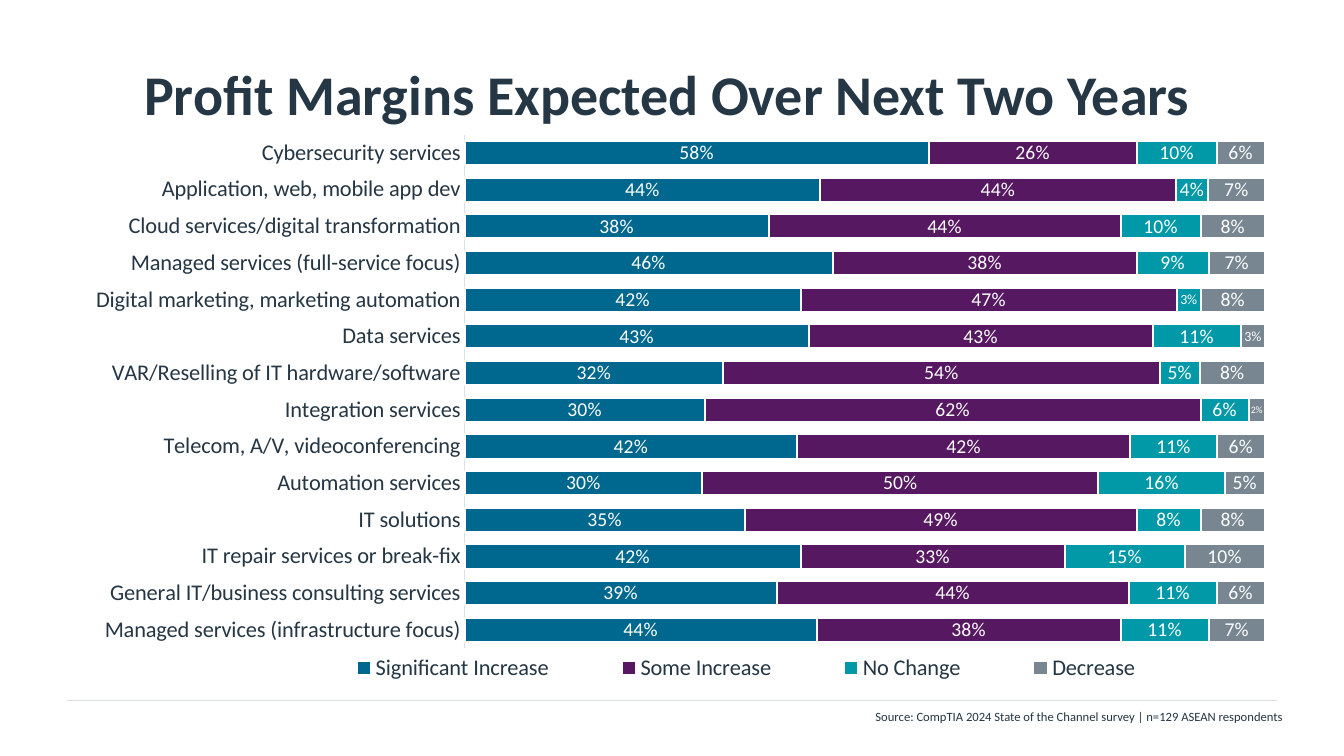
import pptx
import pptx.util
import pptx.oxml
import pptx.chart.data
import pptx.dml.color
import pptx.enum.chart
import pptx.enum.shapes
import pptx.enum.text
import lxml.etree

Pt = pptx.util.Pt
XL = pptx.enum.chart
ALIGN = pptx.enum.text.PP_ALIGN
INK, WHITE = "253644", "FEFFFE"
NS = "http://schemas.openxmlformats.org/drawingml/2006/chart"


def style(font, size, color, bold=False):
    look = {"name": "Calibri", "size": Pt(size), "bold": bold}
    for key, val in look.items():
        setattr(font, key, val)
    paint(font.color, color)


def paint(target, color):
    """Set the colour of a font, line or solid fill from a hex string."""
    target.rgb = pptx.dml.color.RGBColor.from_string(color)


deck = pptx.Presentation()
deck.slide_width, deck.slide_height = Pt(960), Pt(540)
slide = deck.slides.add_slide(deck.slide_layouts[5])
back = slide.background.fill
back.solid()
paint(back.fore_color, WHITE)

# Title
title = slide.shapes.title
place = {"left": Pt(48), "top": Pt(21.6), "width": Pt(864), "height": Pt(90)}
for key, val in place.items():
    setattr(title, key, val)
frame = title.text_frame
frame.text = "Profit Margins Expected Over Next Two Years"
inset = {"margin_left": 0, "margin_right": Pt(7.2),
         "margin_top": Pt(3.6), "margin_bottom": Pt(3.6),
         "vertical_anchor": pptx.enum.text.MSO_ANCHOR.MIDDLE,
         "auto_size": pptx.enum.text.MSO_AUTO_SIZE.NONE}
for key, val in inset.items():
    setattr(frame, key, val)
frame.paragraphs[0].alignment = ALIGN.CENTER
style(frame.paragraphs[0].runs[0].font, 40, INK, True)

# Footer rule
rule = slide.shapes.add_connector(
    pptx.enum.shapes.MSO_CONNECTOR.STRAIGHT, Pt(48), Pt(500.4), Pt(912), Pt(500.4))
rule.line.width = Pt(0.5)
paint(rule.line.color, "DADFE1")
lxml.etree.SubElement(rule._element.spPr, pptx.oxml.ns.qn("a:effectLst"))

# Chart data, from the bottom bar up; each row holds percentages by answer
answers = {"Significant Increase": "00688E", "Some Increase": "561861",
           "No Change": "0198A7", "Decrease": "778691"}
rows = [
    ("Managed services (infrastructure focus)", 44, 38, 11, 7),
    ("General IT/business consulting services", 39, 44, 11, 6),
    ("IT repair services or break-fix", 42, 33, 15, 10),
    ("IT solutions", 35, 49, 8, 8),
    ("Automation services", 30, 50, 16, 5),
    ("Telecom, A/V, videoconferencing", 42, 42, 11, 6),
    ("Integration services", 30, 62, 6, 2),
    ("VAR/Reselling of IT hardware/software", 32, 54, 5, 8),
    ("Data services", 43, 43, 11, 3),
    ("Digital marketing, marketing automation", 42, 47, 3, 8),
    ("Managed services (full-service focus)", 46, 38, 9, 7),
    ("Cloud services/digital transformation", 38, 44, 10, 8),
    ("Application, web, mobile app dev", 44, 44, 4, 7),
    ("Cybersecurity services", 58, 26, 10, 6),
]
data = pptx.chart.data.CategoryChartData(number_format="0%")
data.categories = [row[0] for row in rows]
for col, name in enumerate(answers, 1):
    data.add_series(name, [row[col] / 100 for row in rows])

chart = slide.shapes.add_chart(
    XL.XL_CHART_TYPE.BAR_STACKED_100, Pt(48), Pt(95.8), Pt(890), Pt(395.3), data).chart
style(chart.font, 10, INK)
chart.has_title = False
plot = chart.plots[0]
for key, val in {"gap_width": 51, "overlap": 100, "vary_by_categories": False}.items():
    setattr(plot, key, val)

# Axes
cats, scale = chart.category_axis, chart.value_axis
for key in ("major_tick_mark", "minor_tick_mark"):
    setattr(cats, key, XL.XL_TICK_MARK.NONE)
style(cats.tick_labels.font, 16, INK)
cats.format.line.width = Pt(0.75)
paint(cats.format.line.color, "D8E1EA")
limits = {"visible": False, "has_major_gridlines": False,
          "minimum_scale": 0, "maximum_scale": 1.02}
for key, val in limits.items():
    setattr(scale, key, val)

# Bars and their labels; the thinnest bars get smaller text
small = {2: 7, 3: 10}
for col, (bars, color) in enumerate(zip(plot.series, answers.values()), 1):
    bars.format.fill.solid()
    paint(bars.format.fill.fore_color, color)
    bars.format.line.width = Pt(1.5)
    paint(bars.format.line.color, WHITE)
    labels = bars.data_labels
    show = {"show_value": True, "number_format": "0%",
            "number_format_is_linked": False,
            "position": XL.XL_LABEL_POSITION.CENTER}
    for key, val in show.items():
        setattr(labels, key, val)
    style(labels.font, 14, WHITE)
    for num, row in enumerate(rows):
        if row[col] in small:
            label = bars.points[num].data_label
            style(label.font, small[row[col]], WHITE)
            label.position = XL.XL_LABEL_POSITION.CENTER

# Legend
chart.has_legend = True
legend = chart.legend
legend.position = XL.XL_LEGEND_POSITION.BOTTOM
legend.include_in_layout = False
style(legend.font, 16, INK)

# Fixed places for the plot and the legend, as shares of the chart
area = chart._chartSpace.chart.plotArea
for old in area.findall(f"{{{NS}}}layout"):
    area.remove(old)
for host, spot, inner, box in (
        (area, 0, '<c:layoutTarget val="inner"/>', (0.319, 0, 0.655, 0.929)),
        (legend._element, 1, "", (0.18, 0.935, 0.73, 0.065))):
    sides = "".join(f'<c:{key} val="{val}"/>' for key, val in
                    zip(("xMode", "yMode", "x", "y", "w", "h"), ("edge", "edge") + box))
    host.insert(spot, pptx.oxml.parse_xml(
        f'<c:layout xmlns:c="{NS}"><c:manualLayout>{inner}{sides}</c:manualLayout></c:layout>'))

# Source note
note = slide.shapes.add_textbox(Pt(455.8), Pt(502.6), Pt(467.3), Pt(18)).text_frame
note.word_wrap = True
note.auto_size = pptx.enum.text.MSO_AUTO_SIZE.SHAPE_TO_FIT_TEXT
note.text = "Source: CompTIA 2024 State of the Channel survey | n=129 ASEAN respondents"
note.paragraphs[0].alignment = ALIGN.RIGHT
style(note.paragraphs[0].runs[0].font, 9, INK)

deck.save("out.pptx")
